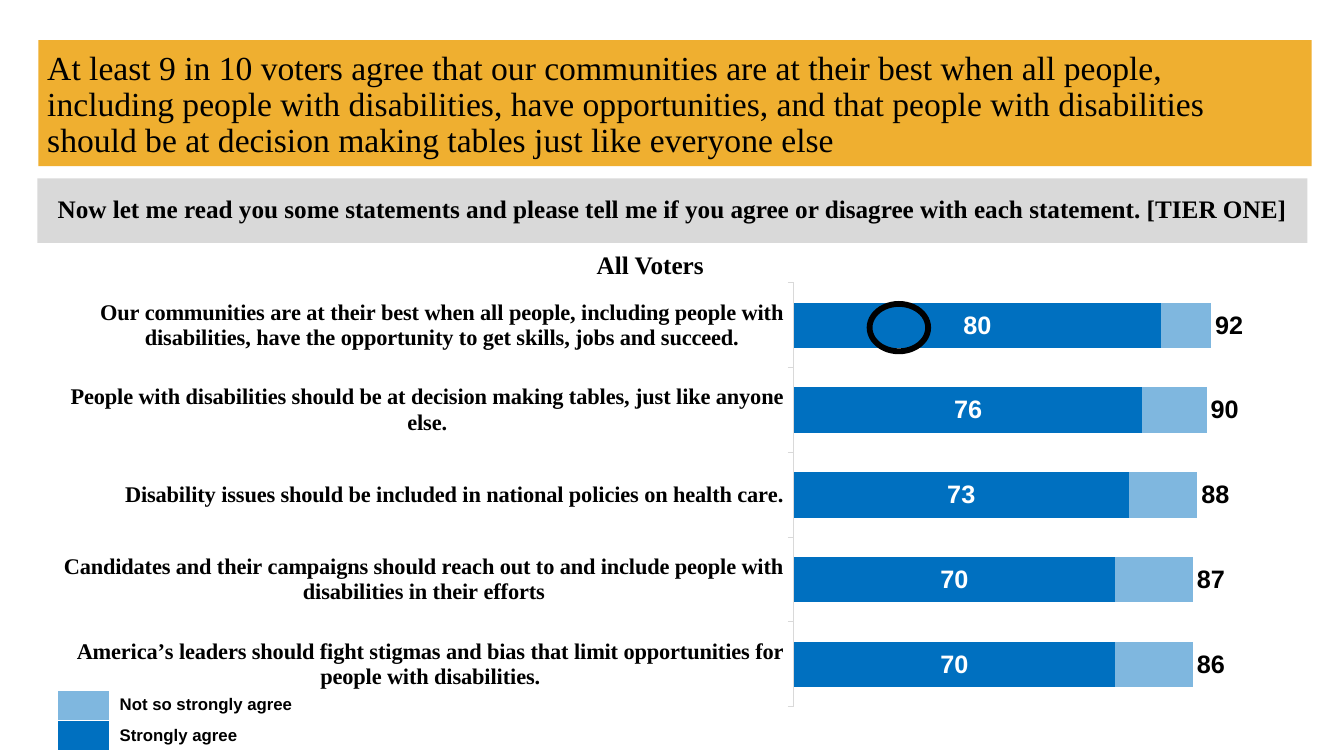
from lxml.etree import SubElement
from pptx import Presentation
from pptx.chart.data import CategoryChartData
from pptx.dml.color import RGBColor
from pptx.enum.chart import XL_CHART_TYPE, XL_LABEL_POSITION, XL_TICK_LABEL_POSITION, XL_TICK_MARK
from pptx.enum.shapes import MSO_SHAPE
from pptx.enum.text import MSO_ANCHOR, PP_ALIGN
from pptx.oxml import parse_xml
from pptx.oxml.ns import nsdecls, qn
from pptx.util import Inches, Pt

AMBER = RGBColor(0xEF, 0xAF, 0x30)
GRAY = RGBColor(0xD9, 0xD9, 0xD9)
BLACK = RGBColor(0, 0, 0)
WHITE = RGBColor(0xFF, 0xFF, 0xFF)
STRONG = RGBColor(0x00, 0x70, 0xC0)
SOFT = RGBColor(0x7F, 0xB7, 0xDF)
SERIF, SANS = "Times New Roman", "Arial"
WIDTH, HEIGHT = Inches(13.33), Inches(7.5)

HEADLINE = ("At least 9 in 10 voters agree that our communities are at their best when all "
            "people, including people with disabilities, have opportunities, and that people "
            "with disabilities should be at decision making tables just like everyone else")
QUESTION = ("Now let me read you some statements and please tell me if you agree or disagree "
            "with each statement. [TIER ONE]")
# Statement, strongly agree, not so strongly agree, total shown
RESULTS = [
    ("Our communities are at their best when all people, including people with disabilities, "
     "have the opportunity to get skills, jobs and succeed.", 80, 11, 92),
    ("People with disabilities should be at decision making tables, just like anyone else.",
     76, 14, 90),
    ("Disability issues should be included in national policies on health care.", 73, 15, 88),
    ("Candidates and their campaigns should reach out to and include people with disabilities "
     "in their efforts", 70, 17, 87),
    ("America’s leaders should fight stigmas and bias that limit opportunities for people "
     "with disabilities.", 70, 17, 86),
]
LEGEND = [("Not so strongly agree", SOFT), ("Strongly agree", STRONG)]


def area(left, top, width, height):
    """Turn percentages of the slide's size into lengths."""
    return (int(WIDTH * left / 100), int(HEIGHT * top / 100),
            int(WIDTH * width / 100), int(HEIGHT * height / 100))


def style_font(font, size, name, color=BLACK, bold=True):
    font.size, font.name, font.bold = Pt(size), name, bold
    font.color.rgb = color


def write(frame, text, size, name=SERIF, bold=True, align=PP_ALIGN.LEFT, spacing=1.0):
    frame.word_wrap = True
    frame.vertical_anchor = MSO_ANCHOR.MIDDLE
    para = frame.paragraphs[0]
    para.text = text
    para.alignment, para.line_spacing = align, spacing
    style_font(para.runs[0].font, size, name, bold=bold)


def add_figure(page, kind, place, fill):
    figure = page.shapes.add_shape(kind, *place)
    figure.shadow.inherit = False
    figure.fill.solid()
    figure.fill.fore_color.rgb = fill
    figure.line.fill.background()
    return figure


def add_label(page, place, text, size, **looks):
    box = page.shapes.add_textbox(*place)
    write(box.text_frame, text, size, **looks)


def fix_plot_area(chart, **shares):
    plot_area = chart.plots[0]._element.getparent()
    for old in plot_area.findall(qn("c:layout")):
        plot_area.remove(old)
    layout = parse_xml(f"<c:layout {nsdecls('c')}/>")
    manual = SubElement(layout, qn("c:manualLayout"))
    settings = {"layoutTarget": "inner", "xMode": "edge", "yMode": "edge", **shares}
    for tag, value in settings.items():
        SubElement(manual, qn(f"c:{tag}")).set("val", str(value))
    plot_area.insert(0, layout)


def show_values(series, color, position):
    labels = series.data_labels
    labels.show_value = True
    labels.position = position
    style_font(labels.font, 18, SANS, color)


def add_agreement_chart(page, place):
    statements, *columns = zip(*RESULTS)
    chart_data = CategoryChartData()
    chart_data.categories = statements
    for number, values in enumerate(columns, 1):
        chart_data.add_series(f"Series {number}", values)
    chart = page.shapes.add_chart(XL_CHART_TYPE.BAR_STACKED, *place, chart_data).chart
    chart.has_legend = chart.has_title = False
    style_font(chart.font, 10, SANS, bold=False)
    fix_plot_area(chart, x=0.61, y=0.02, w=0.37, h=0.96)

    # Axes
    statement_axis, value_axis = chart.category_axis, chart.value_axis
    statement_axis.reverse_order = True
    statement_axis.major_tick_mark = XL_TICK_MARK.OUTSIDE
    statement_axis.tick_label_position = XL_TICK_LABEL_POSITION.LOW
    statement_axis.format.line.color.rgb = GRAY
    statement_axis.format.line.width = Pt(0.75)
    style_font(statement_axis.tick_labels.font, 16, SERIF)
    value_axis.minimum_scale, value_axis.maximum_scale = 0, 100
    value_axis.has_major_gridlines = False
    value_axis.visible = False

    # Bars: the unfilled last series carries the totals
    plot = chart.plots[0]
    plot.gap_width, plot.overlap = 86, 100
    plot.vary_by_categories = False
    strong, soft, total = plot.series
    for series, color in ((strong, STRONG), (soft, SOFT)):
        series.format.fill.solid()
        series.format.fill.fore_color.rgb = color
    total.format.fill.background()
    show_values(strong, WHITE, XL_LABEL_POSITION.CENTER)
    show_values(total, BLACK, XL_LABEL_POSITION.INSIDE_BASE)


def add_borders(cell):
    properties = cell._tc.get_or_add_tcPr()
    for side in "LRTB":
        properties.append(parse_xml(
            f'<a:ln{side} {nsdecls("a")} w="12700"><a:solidFill>'
            f'<a:srgbClr val="{WHITE}"/></a:solidFill></a:ln{side}>'))


def add_legend(page, place):
    table = page.shapes.add_table(len(LEGEND), 2, *place).table
    table.first_row = table.horz_banding = False
    for column, share in zip(table.columns, (0.14, 0.86)):
        column.width = int(place[2] * share)
    for row, (text, color) in enumerate(LEGEND):
        swatch, caption = table.cell(row, 0), table.cell(row, 1)
        add_borders(swatch)
        add_borders(caption)
        swatch.margin_top = swatch.margin_bottom = 0
        swatch.fill.solid()
        swatch.fill.fore_color.rgb = color
        caption.fill.background()
        write(caption.text_frame, text, 12, SANS)
        caption.vertical_anchor = MSO_ANCHOR.TOP


def main():
    deck = Presentation()
    deck.slide_width, deck.slide_height = WIDTH, HEIGHT
    page = deck.slides.add_slide(deck.slide_layouts[6])

    # Headline and question bands
    add_figure(page, MSO_SHAPE.RECTANGLE, area(2.85, 5.33, 94.75, 16.67), AMBER)
    add_label(page, area(2.78, 5.6, 94.5, 16.8), HEADLINE, 24, bold=False, spacing=0.9)
    question = add_figure(page, MSO_SHAPE.RECTANGLE, area(2.78, 23.6, 94.5, 8.53), GRAY)
    write(question.text_frame, QUESTION, 18, align=PP_ALIGN.CENTER, spacing=0.9)

    # Chart with its legend and heading
    add_agreement_chart(page, area(2.78, 36.27, 92.27, 58.4))
    add_legend(page, area(4.28, 91.33, 27.68, 7.73))
    add_label(page, area(43.66, 32.27, 10.43, 5.33), "All Voters", 18)

    # Ring on the top bar
    ring = add_figure(page, MSO_SHAPE.DONUT, area(64.59, 40, 4.58, 6.67), BLACK)
    ring.adjustments[0] = 0.06
    ring.line.color.rgb = BLACK
    ring.line.width = Pt(2)

    deck.save("out.pptx")


if __name__ == "__main__":
    main()
